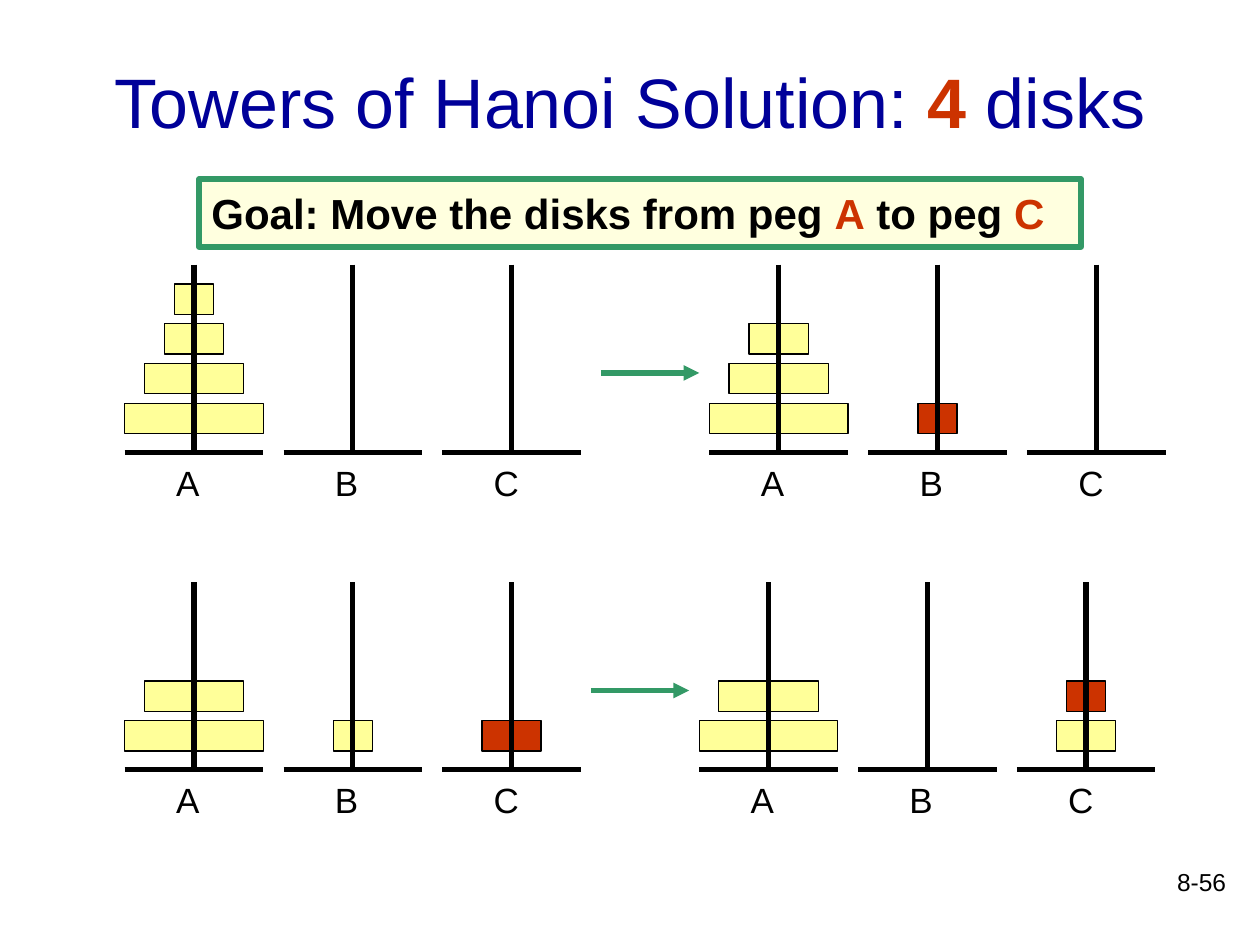
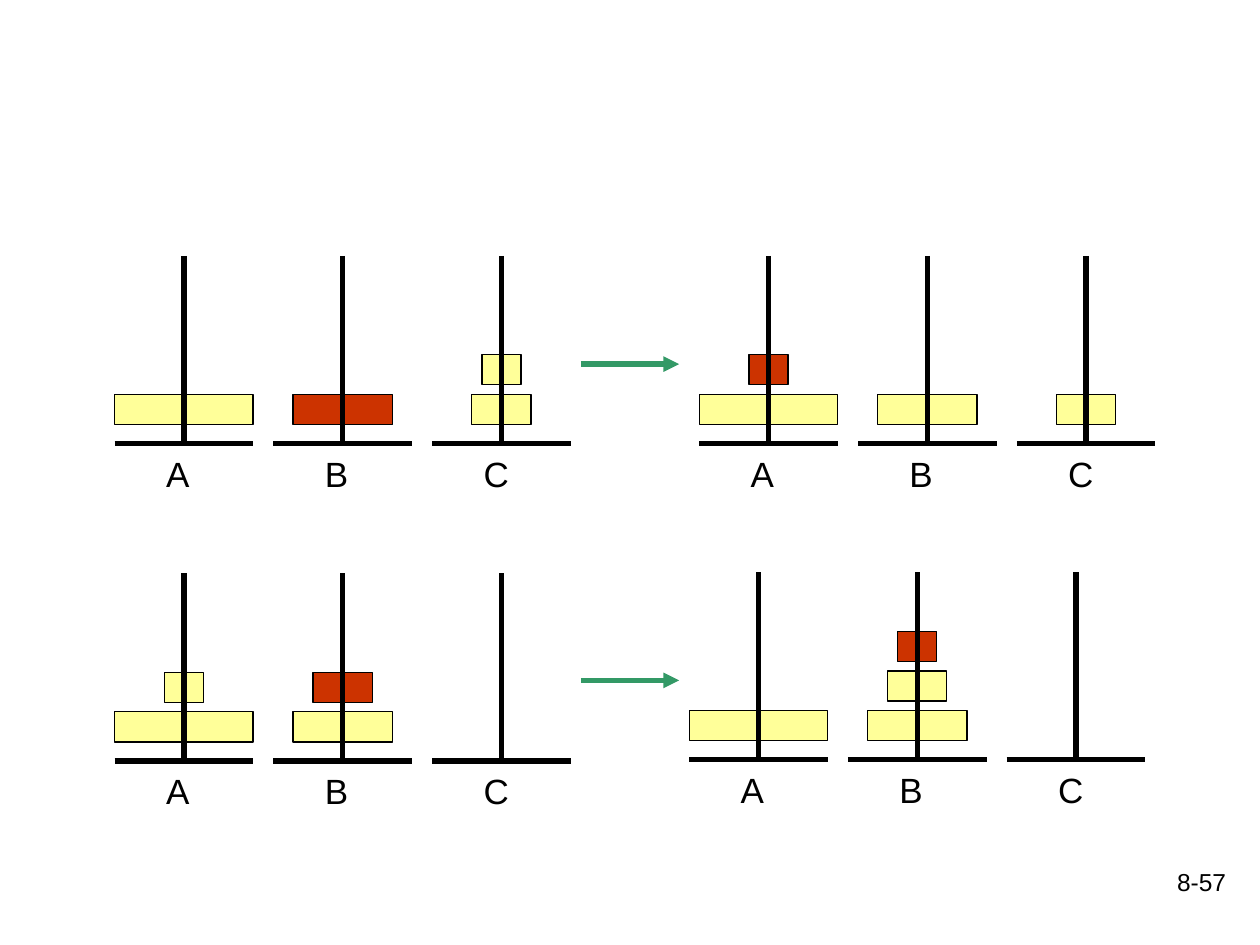
from pptx import Presentation
from pptx.dml.color import RGBColor
from pptx.enum.shapes import MSO_CONNECTOR, MSO_SHAPE
from pptx.enum.text import MSO_ANCHOR, PP_ALIGN
from pptx.oxml.ns import qn
from pptx.util import Inches, Pt
from lxml.etree import SubElement

BLACK = RGBColor(0x00, 0x00, 0x00)
NAVY = RGBColor(0x00, 0x00, 0x99)
RED = RGBColor(0xCC, 0x33, 0x00)
GREEN = RGBColor(0x33, 0x99, 0x66)
YELLOW = RGBColor(0xFF, 0xFF, 0x99)
CREAM = RGBColor(0xFF, 0xFF, 0xDF)

PEG_GAP = 1.26
PEG_HIGH = 1.49
BASE = 1.1
DISK_HIGH = 0.24
DISK_GAP = 0.315
WIDTHS = {"1": 0.31, "2": 0.47, "3": 0.79, "4": 1.1}

PAGES = [
    ("8-56", [
        (1.54, 3.59, ("4321", "", ""), ""),
        (6.18, 3.59, ("432", "1", ""), "1"),
        (1.54, 6.11, ("43", "1", "2"), "2"),
        (6.1, 6.11, ("43", "", "21"), "1"),
    ], [(4.77, 2.96), (4.69, 5.48)]),
    ("8-57", [
        (1.46, 3.52, ("4", "3", "21"), "3"),
        (6.1, 3.52, ("41", "3", "2"), "1"),
        (1.46, 6.04, ("41", "32", ""), "2"),
        (6.02, 6.03, ("4", "321", ""), "1"),
    ], [(4.61, 2.89), (4.61, 5.4)]),
]


def write(frame, parts, size, align=PP_ALIGN.LEFT):
    frame.word_wrap = True
    para = frame.paragraphs[0]
    para.alignment = align
    for text, color, bold in parts:
        run = para.add_run()
        run.text = text
        run.font.name = "Arial"
        run.font.size = Pt(size)
        run.font.bold = bold
        run.font.color.rgb = color


def rule(slide, x1, y1, x2, y2, color=BLACK):
    line = slide.shapes.add_connector(
        MSO_CONNECTOR.STRAIGHT, Inches(x1), Inches(y1), Inches(x2), Inches(y2))
    line.line.color.rgb = color
    line.line.width = Pt(3)
    SubElement(line._element.spPr, qn("a:effectLst"))
    return line


deck = Presentation()
deck.slide_width = Inches(10)
deck.slide_height = Inches(7.5)

for index, (number, towers, arrows) in enumerate(PAGES):
    slide = deck.slides.add_slide(deck.slide_layouts[5 if index == 0 else 6])
    shapes = slide.shapes
    foot = shapes.add_textbox(Inches(7.75), Inches(6.83), Inches(2.08), Inches(0.5))
    write(foot.text_frame, [(number, BLACK, False)], 14, PP_ALIGN.RIGHT)

    for left, floor, stacks, moved in towers:
        for peg, (name, stack) in enumerate(zip("ABC", stacks)):
            mid = left + peg * PEG_GAP
            for level, size in enumerate(stack):
                wide = WIDTHS[size]
                top = floor - 0.39 - level * DISK_GAP
                disk = shapes.add_shape(
                    MSO_SHAPE.RECTANGLE, Inches(mid - wide / 2), Inches(top),
                    Inches(wide), Inches(DISK_HIGH))
                disk.shadow.inherit = False
                disk.fill.solid()
                disk.fill.fore_color.rgb = RED if size == moved else YELLOW
                disk.line.color.rgb = BLACK
                disk.line.width = Pt(0.75)
            rule(slide, mid, floor - PEG_HIGH, mid, floor)
            rule(slide, mid - BASE / 2, floor, mid + BASE / 2, floor)
            label = shapes.add_textbox(
                Inches(mid - 0.24), Inches(floor), Inches(0.47), Inches(0.43))
            label.text_frame.margin_top = Inches(0.07)
            write(label.text_frame, [(name, BLACK, False)], 20)

    for x, y in arrows:
        arrow = rule(slide, x, y, x + 0.78, y, GREEN)
        SubElement(arrow.line._get_or_add_ln(), qn("a:tailEnd"), type="triangle")

first = deck.slides[0]
title = first.shapes.title
title.left, title.top = Inches(0.75), Inches(0.17)
title.width, title.height = Inches(8.5), Inches(1.25)
title.text_frame.vertical_anchor = MSO_ANCHOR.MIDDLE
write(title.text_frame, [
    ("Towers of Hanoi Solution: ", NAVY, False),
    ("4", RED, True),
    (" disks", NAVY, False),
], 40, PP_ALIGN.CENTER)

goal = first.shapes.add_shape(
    MSO_SHAPE.RECTANGLE, Inches(1.58), Inches(1.42), Inches(7), Inches(0.54))
goal.shadow.inherit = False
goal.fill.solid()
goal.fill.fore_color.rgb = CREAM
goal.line.color.rgb = GREEN
goal.line.width = Pt(3)
goal.text_frame.vertical_anchor = MSO_ANCHOR.MIDDLE
write(goal.text_frame, [
    ("Goal: Move the disks from peg ", BLACK, True),
    ("A", RED, True),
    (" to peg ", BLACK, True),
    ("C", RED, True),
], 24)

deck.save("out.pptx")
